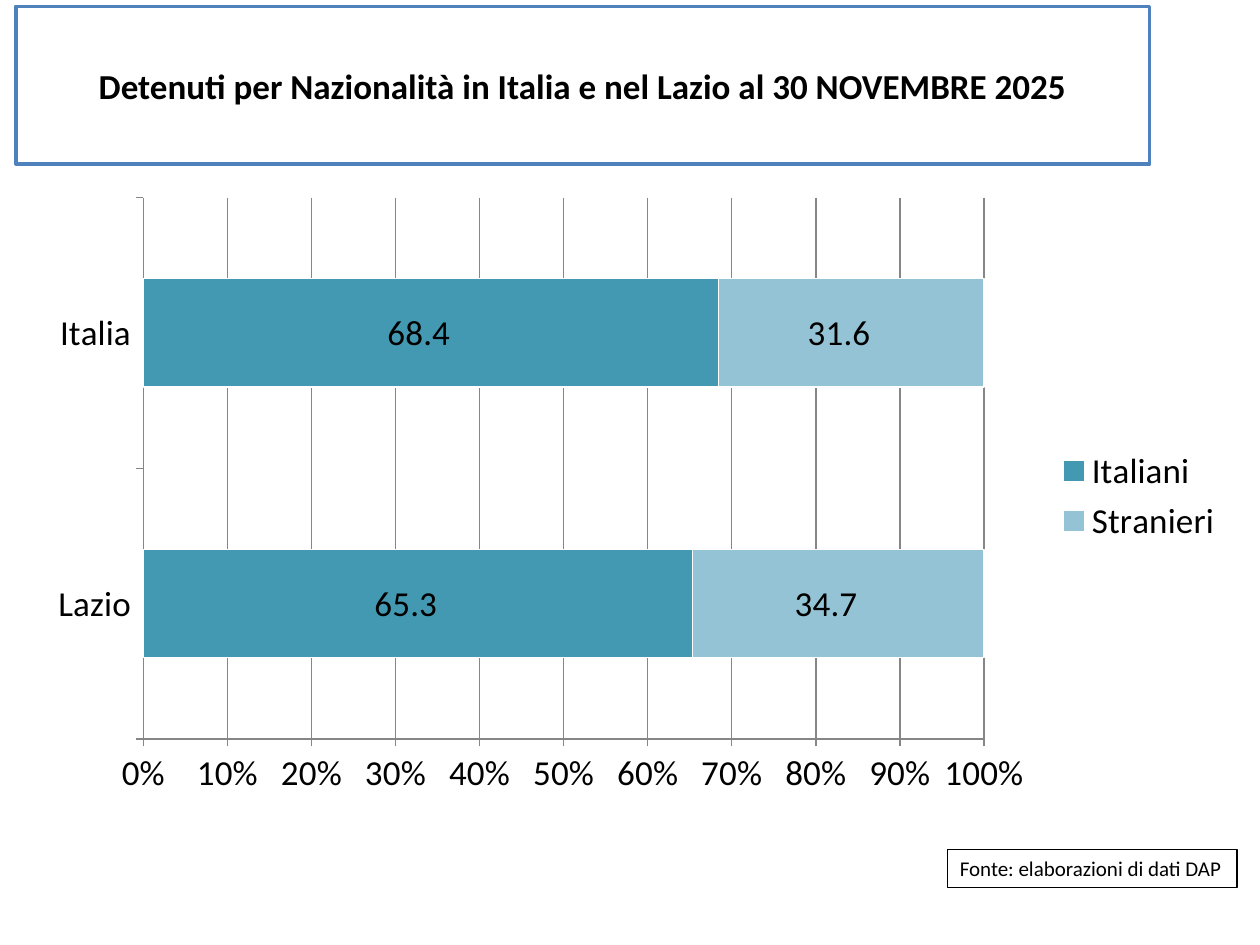
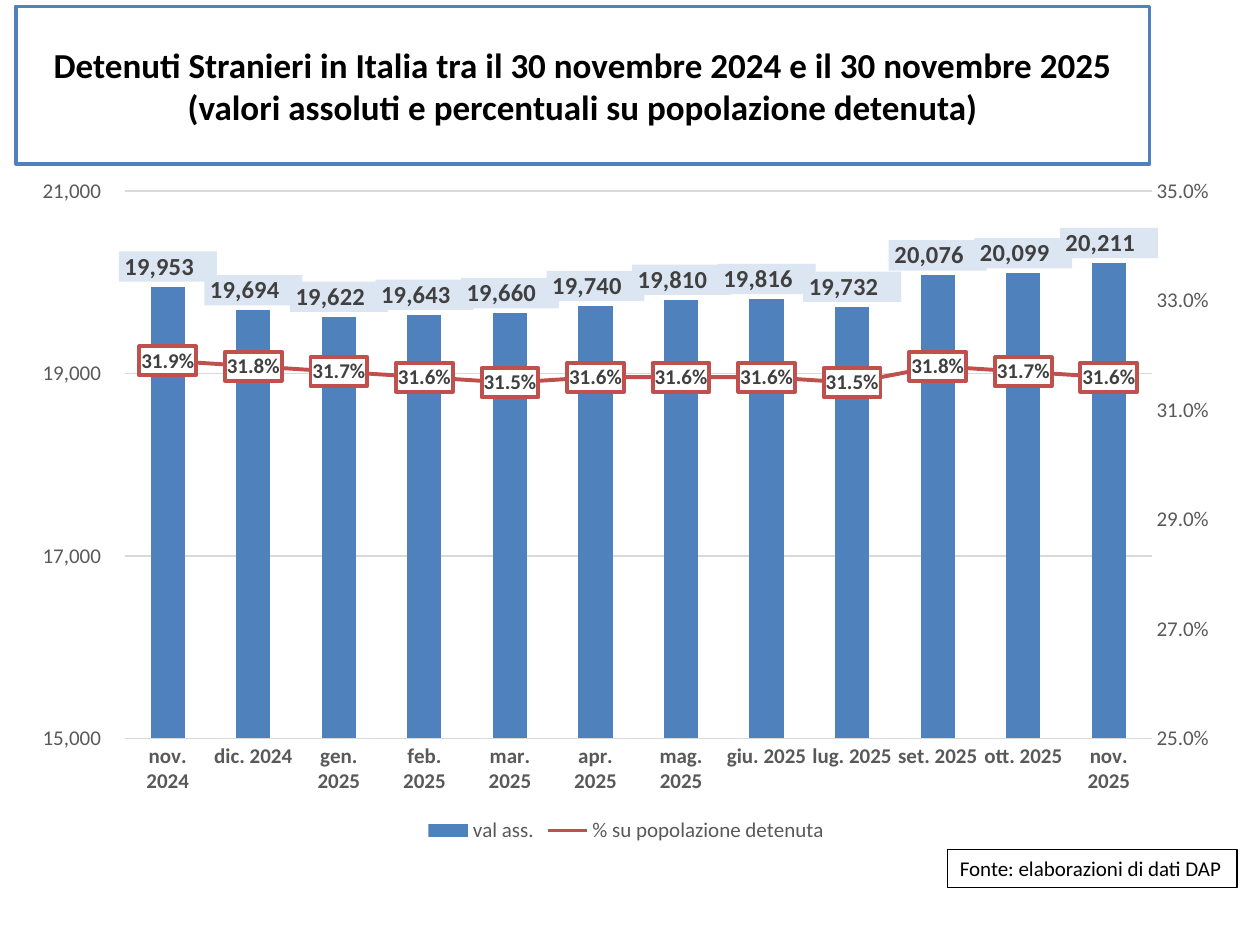
from copy import deepcopy
from dataclasses import dataclass

from pptx import Presentation
from pptx.chart.axis import ValueAxis
from pptx.chart.data import CategoryChartData
from pptx.dml.color import RGBColor
from pptx.enum.chart import (XL_CHART_TYPE as CT, XL_LABEL_POSITION as LP,
                             XL_LEGEND_POSITION as LEG, XL_MARKER_STYLE as MS,
                             XL_TICK_MARK as TM)
from pptx.enum.text import (MSO_ANCHOR as ANCHOR, MSO_AUTO_SIZE as FIT,
                            PP_ALIGN as ALIGN)
from pptx.oxml import parse_xml
from pptx.oxml.ns import nsdecls, qn
from pptx.util import Pt


@dataclass(frozen=True)
class Theme:
    font: str = "Calibri"
    black: str = "000000"
    white: str = "FFFFFF"
    blue: str = "4F81BD"
    red: str = "C0504D"
    teal: str = "4399B1"
    light_teal: str = "93C3D4"
    pale_blue: str = "DCE6F2"
    axis_grey: str = "868686"
    grid_grey: str = "D9D9D9"
    text_grey: str = "595959"
    label_grey: str = "404040"
    title_size: int = 20
    label_size: int = 14
    small_size: int = 12


T = Theme()
SOURCE = "Fonte: elaborazioni di dati DAP"
COUNT_FORMAT = r'_-* #,##0\ _€_-;\-* #,##0\ _€_-;_-* "-"?'
SHARE_FORMAT = r"_-* #,##0.0\ _€_-;\-* #,##0.0\ _€_-"
MONTHS = ["nov. 2024", "dic. 2024", "gen. 2025", "feb. 2025", "mar. 2025",
          "apr. 2025", "mag. 2025", "giu. 2025", "lug. 2025", "set. 2025",
          "ott. 2025", "nov. 2025"]
FOREIGN = [19953, 19694, 19622, 19643, 19660, 19740,
           19810, 19816, 19732, 20076, 20099, 20211]
FOREIGN_SHARE = [0.319, 0.318, 0.317, 0.316, 0.315, 0.316,
                 0.316, 0.316, 0.315, 0.318, 0.317, 0.316]


# Formatting helpers
def set_font(font, size=T.small_size, color=T.black, bold=False):
    font.name, font.size, font.bold = T.font, Pt(size), bold
    font.color.rgb = RGBColor.from_string(color)


def set_fill(fill, color):
    fill.solid()
    fill.fore_color.rgb = RGBColor.from_string(color)


def set_line(line, color, width=0.75):
    set_fill(line.fill, color)
    line.width = Pt(width)


def write(tf, text, align=ALIGN.LEFT, **font):
    p = tf.paragraphs[0]
    p.alignment = align
    r = p.add_run()
    r.text = text
    set_font(r.font, **font)


# Slide frame: title band and source note
def add_slide(prs, title):
    s = prs.slides.add_slide(prs.slide_layouts[5])
    sp = s.shapes.title
    sp.left, sp.top, sp.width, sp.height = Pt(9), Pt(3.6), Pt(648), Pt(90)
    set_fill(sp.fill, T.white)
    set_line(sp.line, T.blue, 2)
    tf = sp.text_frame
    tf.word_wrap, tf.auto_size = True, FIT.NONE
    tf.vertical_anchor = ANCHOR.MIDDLE
    write(tf, title, ALIGN.CENTER, size=T.title_size, bold=True)
    return s


def add_source(s):
    sp = s.shapes.add_textbox(Pt(541.4), Pt(485.3), Pt(165.6), Pt(21.8))
    set_fill(sp.fill, T.white)
    set_line(sp.line, T.black)
    sp.text_frame.word_wrap = False
    sp.text_frame.auto_size = FIT.SHAPE_TO_FIT_TEXT
    write(sp.text_frame, SOURCE)


# Chart parts
def add_chart(s, kind, box, cats, series, plot_box, legend_pos, size):
    data = CategoryChartData()
    data.categories = cats
    for name, values in series:
        data.add_series(name, values)
    frame = s.shapes.add_chart(kind, *map(Pt, box), data)
    chart = frame.chart
    chart.has_title = False
    set_font(chart.font, size)
    chart.has_legend = True
    chart.legend.position = legend_pos
    chart.legend.include_in_layout = False
    plot = chart.plots[0]
    plot.gap_width, plot.vary_by_categories = 150, False
    place_plot(chart, plot_box)
    return chart


def place_plot(chart, plot_box):
    area = chart.plots[0]._element.getparent()
    for old in area.findall(qn("c:layout")):
        area.remove(old)
    sizes = "".join(f'<c:{k} val="{v}"/>' for k, v in zip("xywh", plot_box))
    area.insert(0, parse_xml(
        f'<c:layout {nsdecls("c")}><c:manualLayout><c:layoutTarget val="inner"/>'
        f'<c:xMode val="edge"/><c:yMode val="edge"/>{sizes}'
        '</c:manualLayout></c:layout>'))


def style_axis(axis, tick, line, **font):
    axis.major_tick_mark, axis.minor_tick_mark = tick, TM.NONE
    set_font(axis.tick_labels.font, **font)
    if line:
        set_line(axis.format.line, line)
    else:
        axis.format.line.fill.background()


def set_scale(axis, low, high, step, fmt):
    axis.minimum_scale, axis.maximum_scale, axis.major_unit = low, high, step
    set_number_format(axis.tick_labels, fmt)


def set_number_format(labels, fmt):
    labels.number_format, labels.number_format_is_linked = fmt, False


def set_grid(axis, color):
    axis.has_major_gridlines = True
    set_line(axis.major_gridlines.format.line, color)


def add_labels(series, fmt, pos, fill=None, border=None, **font):
    labels = series.data_labels
    labels.show_value, labels.position = True, pos
    set_number_format(labels, fmt)
    set_font(labels.font, **font)
    if fill:
        paint = '<a:solidFill><a:srgbClr val="{}"/></a:solidFill>'
        edge = f'<a:ln w="{Pt(2.25)}">{paint.format(border)}</a:ln>' if border else ""
        labels._element.find(qn("c:numFmt")).addnext(parse_xml(
            f'<c:spPr {nsdecls("c", "a")}>{paint.format(fill)}{edge}</c:spPr>'))


def set_child(parent, tag, value):
    parent.find(qn(tag)).set("val", value)


def move_to_right_axis(chart):
    """Turn the second column series into a line on a right-hand axis."""
    bars = chart.plots[0]._element
    ser = bars.findall(qn("c:ser"))[1]
    for bar_only in ser.findall(qn("c:invertIfNegative")):
        ser.remove(bar_only)
    line = parse_xml(
        f'<c:lineChart {nsdecls("c")}><c:grouping val="standard"/>'
        '<c:varyColors val="0"/><c:marker val="1"/>'
        '<c:axId val="5001"/><c:axId val="5002"/></c:lineChart>')
    line.insert(2, ser)
    bars.addnext(line)
    val = chart.value_axis._element
    right, hidden = deepcopy(val), deepcopy(chart.category_axis._element)
    for ax, own, other in ((right, "5002", "5001"), (hidden, "5001", "5002")):
        set_child(ax, "c:axId", own)
        set_child(ax, "c:crossAx", other)
    set_child(right, "c:axPos", "r")
    set_child(right, "c:crosses", "max")
    hidden_axis = type(chart.category_axis)(hidden)
    hidden_axis.visible = False
    val.addnext(right)
    right.addnext(hidden)
    axis = ValueAxis(right)
    axis.has_major_gridlines = False
    return axis


# Slides
def nationality_slide(prs):
    s = add_slide(prs, "Detenuti per Nazionalità in Italia e nel Lazio "
                       "al 30 NOVEMBRE 2025")
    add_source(s)
    chart = add_chart(s, CT.BAR_STACKED_100, (20.2, 105.8, 686.2, 355.7),
                      ["Lazio", "Italia"],
                      [("Italiani", [65.3, 68.4]), ("Stranieri", [34.7, 31.6])],
                      (0.09, 0.02, 0.7, 0.87), LEG.RIGHT, T.title_size)
    chart.plots[0].overlap = 100
    for axis in (chart.category_axis, chart.value_axis):
        style_axis(axis, TM.OUTSIDE, T.axis_grey, size=T.title_size)
    set_number_format(chart.value_axis.tick_labels, "0%")
    set_grid(chart.value_axis, T.axis_grey)
    for ser, color in zip(chart.plots[0].series, (T.teal, T.light_teal)):
        set_fill(ser.format.fill, color)
        set_line(ser.format.line, T.white)
        add_labels(ser, SHARE_FORMAT, LP.CENTER, size=T.title_size)


def trend_slide(prs):
    s = add_slide(prs, "Detenuti Stranieri in Italia tra il 30 novembre 2024 e il "
                       "30 novembre 2025 (valori assoluti e percentuali su "
                       "popolazione detenuta)")
    add_source(s)
    chart = add_chart(s, CT.COLUMN_CLUSTERED, (8.6, 93.6, 698.4, 391),
                      MONTHS,
                      [("val ass.", FOREIGN),
                       ("% su popolazione detenuta", FOREIGN_SHARE)],
                      (0.09, 0.04, 0.84, 0.8), LEG.BOTTOM, T.small_size)
    set_font(chart.legend.font, color=T.text_grey)
    style_axis(chart.category_axis, TM.NONE, T.grid_grey,
               color=T.text_grey, bold=True)
    style_axis(chart.value_axis, TM.NONE, None, color=T.text_grey)
    set_scale(chart.value_axis, 15000, 21000, 2000, COUNT_FORMAT)
    set_grid(chart.value_axis, T.grid_grey)
    set_scale(move_to_right_axis(chart), 0.25, 0.35, 0.02, "0.0%")

    columns, share = (plot.series[0] for plot in chart.plots)
    set_fill(columns.format.fill, T.blue)
    add_labels(columns, COUNT_FORMAT, LP.OUTSIDE_END, T.pale_blue,
               size=T.label_size, color=T.label_grey, bold=True)
    set_line(share.format.line, T.red, 2.25)
    share.marker.style, share.smooth = MS.NONE, False
    add_labels(share, "0.0%", LP.CENTER, T.white, T.red,
               color=T.label_grey, bold=True)


def main():
    prs = Presentation()
    prs.slide_width, prs.slide_height = Pt(720), Pt(540)
    nationality_slide(prs)
    trend_slide(prs)
    prs.save("out.pptx")


if __name__ == "__main__":
    main()
